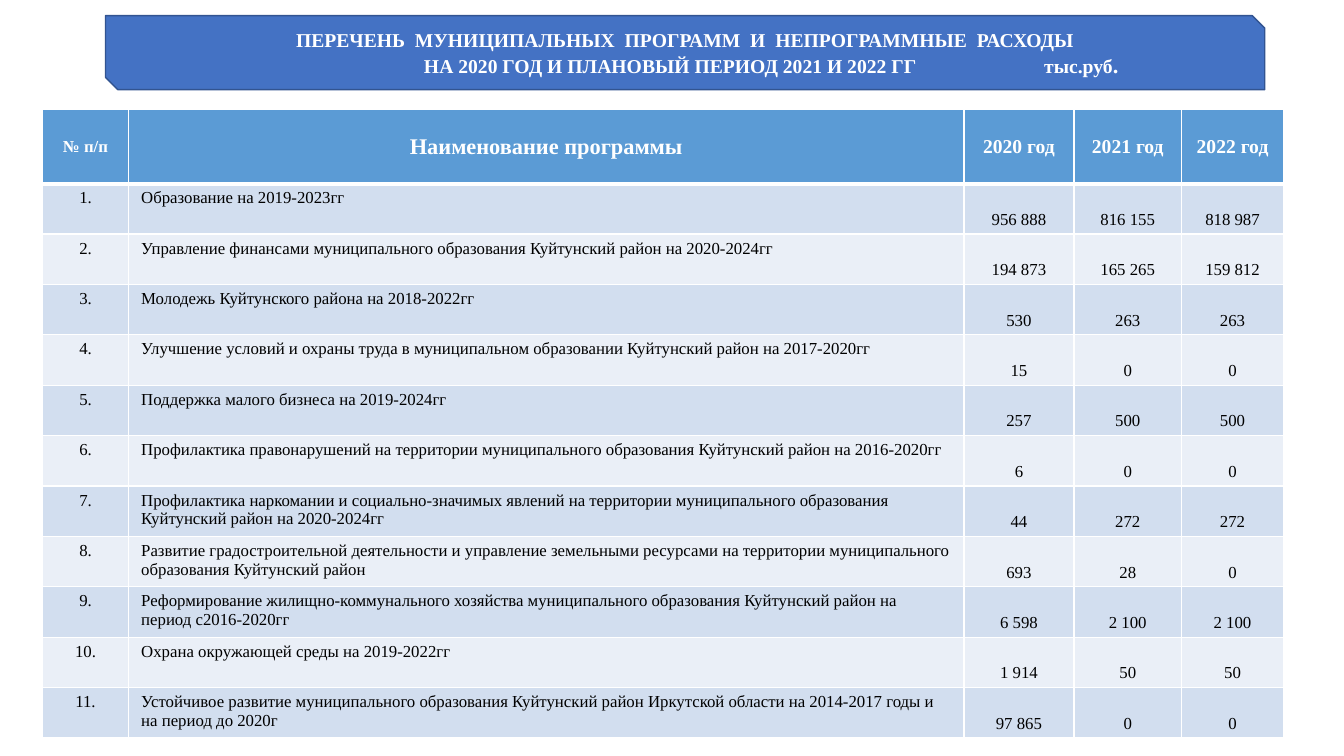
from lxml import etree
from pptx import Presentation
from pptx.dml.color import RGBColor
from pptx.enum import shapes, text
from pptx.oxml.ns import qn
from pptx.util import Pt

FONT = "Times New Roman"
WHITE, BLACK = "FFFFFF", "000000"
BANNER_FILL, BANNER_LINE = "4472C4", "325491"
HEADER_FILL = "5B9BD5"
BANDS = ("D2DEEF", "EAEFF7")

BANNER_LINES = (
    "ПЕРЕЧЕНЬ  МУНИЦИПАЛЬНЫХ  ПРОГРАММ  И  НЕПРОГРАММНЫЕ  РАСХОДЫ",
    "\tНА 2020 ГОД И ПЛАНОВЫЙ ПЕРИОД 2021 И 2022 ГГ\tтыс.руб",
)
HEADINGS = (("№ п/п", 12), ("Наименование программы", 16),
            ("2020 год", 14), ("2021 год", 14), ("2022 год", 14))
COLUMN_WIDTHS = (61.2, 596.9, 78.5, 77, 72.7)
HEADER_HEIGHT, ROW_HEIGHT = 53, 36
PROGRAMS = (
    ("Образование на 2019-2023гг", "956 888", "816 155", "818 987"),
    ("Управление финансами муниципального образования Куйтунский район на 2020-2024гг",
     "194 873", "165 265", "159 812"),
    ("Молодежь Куйтунского района на 2018-2022гг", "530", "263", "263"),
    ("Улучшение условий и охраны труда в муниципальном образовании "
     "Куйтунский район на 2017-2020гг", "15", "0", "0"),
    ("Поддержка малого бизнеса на 2019-2024гг", "257", "500", "500"),
    ("Профилактика правонарушений на территории муниципального образования "
     "Куйтунский район на 2016-2020гг", "6", "0", "0"),
    ("Профилактика наркомании и социально-значимых явлений на территории "
     "муниципального образования Куйтунский район на 2020-2024гг", "44", "272", "272"),
    ("Развитие градостроительной деятельности и управление земельными ресурсами "
     "на территории муниципального образования Куйтунский район", "693", "28", "0"),
    ("Реформирование жилищно-коммунального хозяйства муниципального образования "
     "Куйтунский район на период с2016-2020гг", "6 598", "2 100", "2 100"),
    ("Охрана окружающей среды на 2019-2022гг", "1 914", "50", "50"),
    ("Устойчивое развитие муниципального образования Куйтунский район Иркутской "
     "области на 2014-2017 годы и на период до 2020г", "97 865", "0", "0"),
)


def color(value):
    return RGBColor.from_string(value)


def format_runs(paragraph, size, ink, bold):
    for run in paragraph.runs:
        run.font.name = FONT
        run.font.size = Pt(size)
        run.font.bold = bold
        run.font.color.rgb = color(ink)


def add_tab_stops(paragraph, *positions):
    stops = etree.SubElement(paragraph._p.get_or_add_pPr(), qn("a:tabLst"))
    for position in positions:
        etree.SubElement(stops, qn("a:tab"), pos=str(Pt(position)), algn="l")


def add_banner(slide, left, top, width, height):
    banner = slide.shapes.add_shape(shapes.MSO_SHAPE.SNIP_2_DIAG_RECTANGLE,
                                    Pt(left), Pt(top), Pt(width), Pt(height))
    banner.shadow.inherit = False
    banner.fill.solid()
    banner.fill.fore_color.rgb = color(BANNER_FILL)
    banner.line.color.rgb = color(BANNER_LINE)
    banner.line.width = Pt(1)
    frame = banner.text_frame
    frame.word_wrap = True
    frame.vertical_anchor = text.MSO_ANCHOR.MIDDLE
    frame.text = "\n".join(BANNER_LINES)
    title, period = frame.paragraphs
    title.alignment = text.PP_ALIGN.CENTER
    period.alignment = text.PP_ALIGN.LEFT
    add_tab_stops(period, 216, 659)
    full_stop = period.add_run()
    full_stop.text = "."
    for line in (title, period):
        format_runs(line, 14, WHITE, True)
    full_stop.font.size = Pt(16)


def add_borders(cell, bottom_width, top_width):
    widths = {"a:lnL": 1, "a:lnR": 1, "a:lnT": top_width, "a:lnB": bottom_width}
    properties = cell._tc.get_or_add_tcPr()
    for tag, width in widths.items():
        border = etree.SubElement(properties, qn(tag), w=str(Pt(width)))
        fill = etree.SubElement(border, qn("a:solidFill"))
        etree.SubElement(fill, qn("a:srgbClr"), val=WHITE)


def fill_cell(cell, words, size, ink, bold, fill, align, anchor, top_width=1, bottom_width=1):
    add_borders(cell, bottom_width, top_width)
    cell.fill.solid()
    cell.fill.fore_color.rgb = color(fill)
    cell.margin_left = cell.margin_right = Pt(9.2)
    cell.margin_top = cell.margin_bottom = Pt(3.6)
    cell.vertical_anchor = anchor
    cell.text = words
    paragraph = cell.text_frame.paragraphs[0]
    paragraph.alignment = align
    format_runs(paragraph, size, ink, bold)


def add_program_table(slide, left, top):
    height = HEADER_HEIGHT + ROW_HEIGHT * len(PROGRAMS)
    table = slide.shapes.add_table(len(PROGRAMS) + 1, len(HEADINGS), Pt(left), Pt(top),
                                   Pt(sum(COLUMN_WIDTHS)), Pt(height)).table
    table.horz_banding = False
    for column, width in zip(table.columns, COLUMN_WIDTHS):
        column.width = Pt(width)
    for row in table.rows:
        row.height = Pt(ROW_HEIGHT)
    table.rows[0].height = Pt(HEADER_HEIGHT)

    center, name_align = text.PP_ALIGN.CENTER, text.PP_ALIGN.LEFT
    anchors = text.MSO_ANCHOR
    for col, (heading, size) in enumerate(HEADINGS):
        fill_cell(table.cell(0, col), heading, size, WHITE, True, HEADER_FILL,
                  center, anchors.MIDDLE, bottom_width=3)
    for number, program in enumerate(PROGRAMS, 1):
        band = BANDS[(number - 1) % 2]
        for col, words in enumerate((f"{number}.", *program)):
            fill_cell(table.cell(number, col), words, 12, BLACK, False, band,
                      name_align if col == 1 else center,
                      anchors.TOP if col < 2 else anchors.BOTTOM,
                      top_width=3 if number == 1 else 1)


def main():
    deck = Presentation()
    deck.slide_width, deck.slide_height = Pt(960), Pt(540)
    slide = deck.slides.add_slide(deck.slide_layouts[6])
    add_banner(slide, 75.4, 11.2, 828, 52.9)
    add_program_table(slide, 30.5, 78.2)
    deck.save("out.pptx")


if __name__ == "__main__":
    main()
